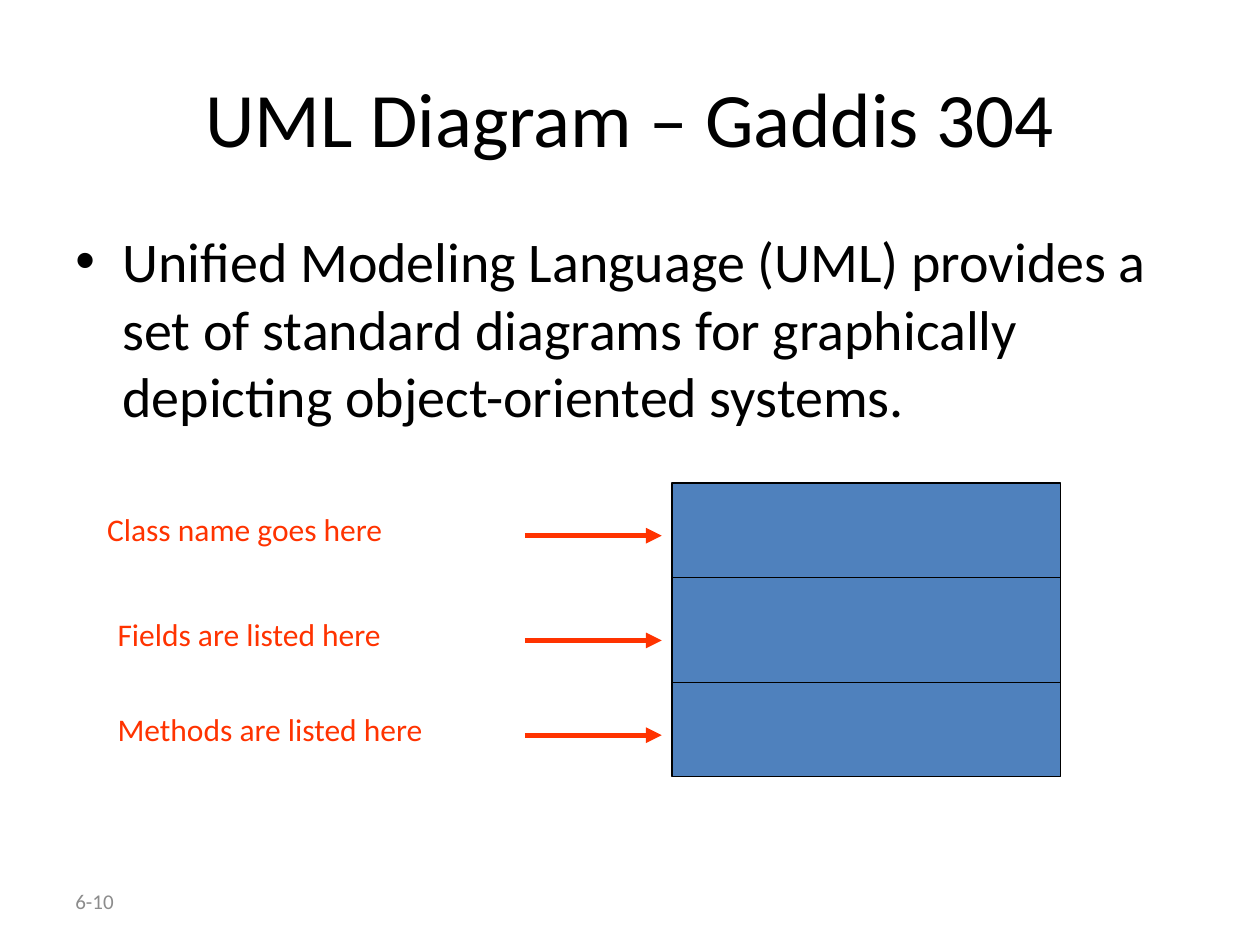
from dataclasses import dataclass

from lxml.etree import SubElement
from pptx import Presentation
from pptx.dml.color import RGBColor
from pptx.enum.shapes import MSO_CONNECTOR as Connector, MSO_SHAPE as Shape
from pptx.enum.text import MSO_ANCHOR as Anchor, PP_ALIGN as Align
from pptx.oxml.ns import qn
from pptx.util import Cm, Pt


@dataclass(frozen=True)
class Theme:
    font: str = "Calibri"
    ink: str = "000000"
    muted: str = "8C8C8C"
    accent: str = "FF3300"
    box: str = "4F81BD"
    title_size: int = 44
    body_size: int = 32
    label_size: int = 18
    number_size: int = 12
    thin: float = 0.75
    thick: float = 3


THEME = Theme()
BOX_LEFT, BOX_RIGHT = 13.55, 21.38
ROW_EDGES = (9.74, 11.64, 13.76, 15.66)
ARROW_LEFT, ARROW_RIGHT = 10.58, 13.34
LABEL_RISE = 0.64  # from the arrow up to the top of its label
LABELS = (  # text, left, arrow height
    ("Class name goes here", 1.91, 10.8),
    ("Fields are listed here", 2.12, 12.91),
    ("Methods are listed here", 2.12, 14.82),
)


def color(value):
    return RGBColor.from_string(value)


def place(shape, left, top, width, height):
    shape.left, shape.top = Cm(left), Cm(top)
    shape.width, shape.height = Cm(width), Cm(height)


def write(shape, text, *, size, ink=THEME.ink, align=Align.LEFT, anchor=Anchor.TOP):
    frame = shape.text_frame
    frame.word_wrap = True
    frame.vertical_anchor = anchor
    paragraph = frame.paragraphs[0]
    paragraph.alignment = align
    run = paragraph.add_run()
    run.text = text
    run.font.name = THEME.font
    run.font.size = Pt(size)
    run.font.color.rgb = color(ink)
    return paragraph


def add_text(slide, text, bounds, **text_format):
    box = slide.shapes.add_textbox(*map(Cm, bounds))
    return write(box, text, **text_format)


def add_bullet(paragraph, indent):
    """Give the paragraph a round bullet with a hanging indent in cm."""
    properties = paragraph._p.get_or_add_pPr()
    properties.set("marL", str(Cm(indent)))
    properties.set("indent", str(-Cm(indent)))
    SubElement(properties, qn("a:buFont"), typeface="Arial")
    SubElement(properties, qn("a:buChar"), char="•")


def add_horizontal(slide, left, right, y, *, ink, width, arrow=False):
    line = slide.shapes.add_connector(
        Connector.STRAIGHT, Cm(left), Cm(y), Cm(right), Cm(y))
    line.line.color.rgb = color(ink)
    line.line.width = Pt(width)
    if arrow:
        SubElement(line.line._get_or_add_ln(), qn("a:tailEnd"), type="triangle")
    SubElement(line._element.spPr, qn("a:effectLst"))


def add_class_box(slide):
    """Draw the class rectangle and the lines between its compartments."""
    top, *dividers, bottom = ROW_EDGES
    box = slide.shapes.add_shape(
        Shape.RECTANGLE, Cm(BOX_LEFT), Cm(top),
        Cm(BOX_RIGHT - BOX_LEFT), Cm(bottom - top))
    box.shadow.inherit = False
    box.fill.solid()
    box.fill.fore_color.rgb = color(THEME.box)
    box.line.color.rgb = color(THEME.ink)
    box.line.width = Pt(THEME.thin)
    for y in dividers:
        add_horizontal(slide, BOX_LEFT, BOX_RIGHT, y,
                       ink=THEME.ink, width=THEME.thin)


def add_label(slide, text, left, y):
    add_text(slide, text, (left, y - LABEL_RISE, 8.3, 1.27),
             size=THEME.label_size, ink=THEME.accent)
    add_horizontal(slide, ARROW_LEFT, ARROW_RIGHT, y,
                   ink=THEME.accent, width=THEME.thick, arrow=True)


def main():
    presentation = Presentation()
    presentation.slide_width, presentation.slide_height = Cm(25.4), Cm(19.05)
    slide = presentation.slides.add_slide(presentation.slide_layouts[5])

    title = slide.shapes.title
    place(title, 1.27, 0.76, 22.86, 3.18)
    write(title, "UML Diagram – Gaddis 304", size=THEME.title_size,
          align=Align.CENTER, anchor=Anchor.MIDDLE)

    body = add_text(
        slide,
        "Unified Modeling Language (UML) provides a set of standard diagrams "
        "for graphically depicting object-oriented systems.",
        (1.27, 4.45, 22.86, 12.57), size=THEME.body_size)
    add_bullet(body, 0.95)

    add_class_box(slide)
    for label in LABELS:
        add_label(slide, *label)

    add_text(slide, "6-10", (1.27, 17.65, 5.92, 1.02),
             size=THEME.number_size, ink=THEME.muted, anchor=Anchor.MIDDLE)
    presentation.save("out.pptx")


if __name__ == "__main__":
    main()
